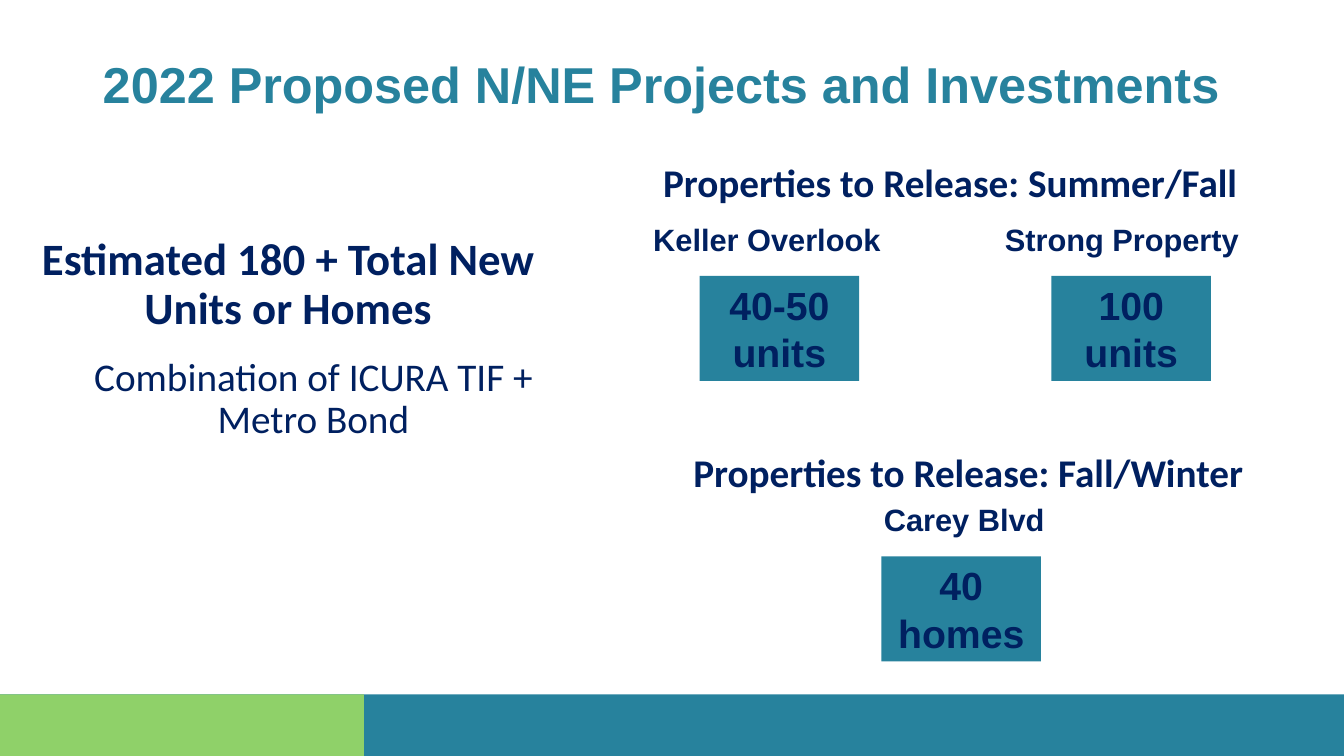
"""Build the slide on 2022 proposed N/NE projects and investments."""
from lxml import etree
from pptx import Presentation
from pptx.dml.color import RGBColor
from pptx.enum.shapes import MSO_SHAPE
from pptx.enum.text import MSO_ANCHOR, MSO_AUTO_SIZE, PP_ALIGN
from pptx.oxml.ns import qn
from pptx.util import Pt

RECT = MSO_SHAPE.RECTANGLE
TOP, MIDDLE = MSO_ANCHOR.TOP, MSO_ANCHOR.MIDDLE
FIXED = MSO_AUTO_SIZE.NONE
LEFT, CENTER = PP_ALIGN.LEFT, PP_ALIGN.CENTER
TEAL, NAVY, GREEN = "27829D", "002060", "8FD169"
SIDES = ("margin_left", "margin_top", "margin_right", "margin_bottom")


def paint(target, tint):
    if hasattr(target, "solid"):
        target.solid()
        target = target.fore_color
    else:
        target = target.color
    target.rgb = RGBColor.from_string(tint)


def write(par, text, size, face, align=LEFT, bold=True, tint=NAVY, **form):
    for key, value in {"alignment": align, **form}.items():
        setattr(par, key, value)
    run = par.add_run()
    run.text = text
    for key, value in {"name": face, "size": Pt(size), "bold": bold}.items():
        setattr(run.font, key, value)
    paint(run.font, tint)


deck = Presentation()
deck.slide_width, deck.slide_height = Pt(960), Pt(540)
slide = deck.slides.add_slide(deck.slide_layouts[1])
shapes = slide.shapes
title, body = slide.placeholders

places = (
    (title, (73.4, 38.2, 851.8, 48.2), MIDDLE),
    (body, (7.2, 169.2, 397.4, 148.3), TOP),
)
for holder, area, anchor in places:
    for side, value in zip(("left", "top", "width", "height"), area):
        setattr(holder, side, Pt(value))
    form = {"vertical_anchor": anchor, "auto_size": FIXED, "word_wrap": True}
    form.update(dict.fromkeys(SIDES, 0))
    for key, value in form.items():
        setattr(holder.text_frame, key, value)

write(title.text_frame.paragraphs[0],
      "2022 Proposed N/NE Projects and Investments", 36, "Arial",
      tint=TEAL, line_spacing=0.9)

points = (
    ("Estimated 180 + Total New Units or Homes", 32, True, 10),
    ("Combination of ICURA TIF + Metro Bond", 28, False, 5),
)
frame = body.text_frame
for level, (text, size, bold, before) in enumerate(points):
    par = frame.add_paragraph() if level else frame.paragraphs[0]
    write(par, text, size, "Calibri", CENTER, bold, level=level,
          line_spacing=0.9, space_before=Pt(before), space_after=Pt(12))
    props = par._p.get_or_add_pPr()
    props.set("marL", str(Pt(36 * level)))
    props.set("indent", "0")
    etree.SubElement(props, qn("a:buNone"))

sites = (
    ("Strong Property", "100 units", 717.8, 751, 157.7),
    ("Keller Overlook", "40-50 units", 466.6, 499.7, 157.7),
    ("Carey Blvd", "40 homes", 631.4, 629.6, 358),
)
for name, count, start, edge, top in sites:
    block = shapes.add_shape(RECT, Pt(edge), Pt(top + 39.4), Pt(114), Pt(75))
    block.shadow.inherit = False
    paint(block.fill, TEAL)
    block.line.fill.background()
    block.text_frame.vertical_anchor = MIDDLE
    block.text_frame.word_wrap = True
    write(block.text_frame.paragraphs[0], count, 28, "Arial", CENTER)

    label = shapes.add_textbox(Pt(start), Pt(top), Pt(190), Pt(27.4))
    frame = label.text_frame
    frame.word_wrap = True
    for side in SIDES:
        setattr(frame, side, 0)
    write(frame.paragraphs[0], name, 22, "Arial", space_before=Pt(1))

heads = (("Summer/Fall", 466.6, 109.4, 458), ("Fall/Winter", 488.2, 316.8, 470))
for season, left, top, width in heads:
    head = shapes.add_textbox(Pt(left), Pt(top), Pt(width), Pt(41))
    head.text_frame.word_wrap = True
    write(head.text_frame.paragraphs[0],
          f"Properties to Release: {season}", 28, "Calibri")

for tint, width in ((TEAL, 960), (GREEN, 260)):
    band = shapes.add_shape(RECT, 0, Pt(496), Pt(width), Pt(44))
    band.shadow.inherit = False
    paint(band.fill, tint)
    band.line.fill.background()

deck.save("out.pptx")
